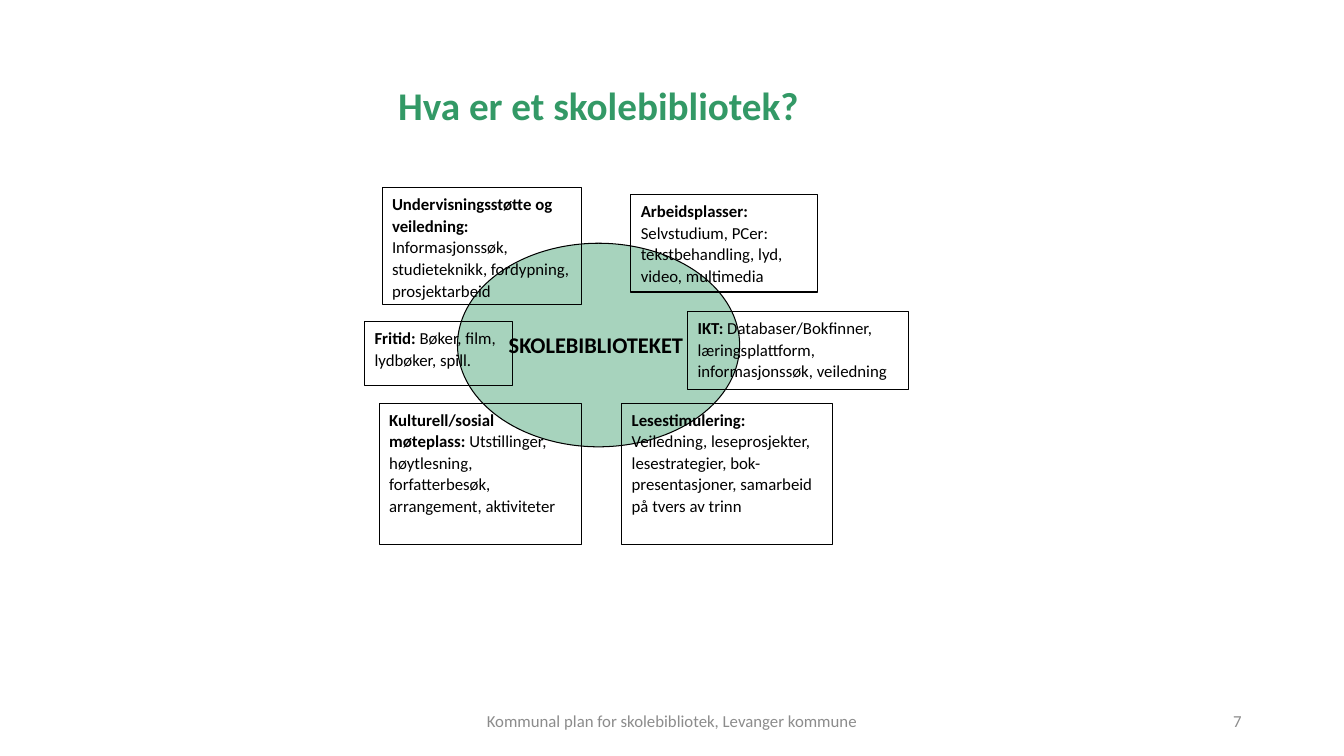
from dataclasses import dataclass

from lxml.etree import SubElement
from pptx import Presentation
from pptx.dml.color import RGBColor
from pptx.enum.shapes import MSO_SHAPE as Preset
from pptx.enum.text import MSO_ANCHOR as Anchor, MSO_AUTO_SIZE as AutoSize, PP_ALIGN as Align
from pptx.oxml.ns import qn
from pptx.shapes.autoshape import Shape
from pptx.slide import Slide
from pptx.text.text import Font
from pptx.util import Cm, Pt

COLOURS = {"green": "339966", "black": "000000", "grey": "8C8C8C"}
FONT_NAME = "Calibri"


@dataclass(frozen=True)
class Frame:
    """Position and size in centimetres."""

    left: float
    top: float
    width: float
    height: float

    def lengths(self) -> tuple[Cm, Cm, Cm, Cm]:
        """Give the four lengths in the order that shapes take them."""
        return Cm(self.left), Cm(self.top), Cm(self.width), Cm(self.height)


@dataclass(frozen=True)
class Role:
    """One role of the school library."""

    frame: Frame
    heading: str
    detail: str


@dataclass(frozen=True)
class FooterItem:
    """One text at the foot of the slide."""

    frame: Frame
    text: str
    alignment: Align


TITLE_FRAME = Frame(9.78, 1.93, 11.2, 1.45)
LIBRARY_FRAME = Frame(11.53, 6.13, 7.11, 5.13)

ROLES = [
    Role(Frame(9.56, 10.16, 5.1, 3.56), "Kulturell/sosial møteplass:",
         "Utstillinger, høytlesning, forfatterbesøk, arrangement, aktiviteter"),
    Role(Frame(15.9, 4.9, 4.7, 2.46), "Arbeidsplasser:",
         "Selvstudium, PCer: tekstbehandling, lyd, video, multimedia"),
    Role(Frame(17.33, 7.85, 5.56, 1.97), "IKT:",
         "Databaser/Bokfinner, læringsplattform, informasjonssøk, veiledning"),
    Role(Frame(15.67, 10.16, 5.31, 3.56), "Lesestimulering:",
         "Veiledning, leseprosjekter, lesestrategier, bok-presentasjoner, samarbeid på tvers av trinn"),
    Role(Frame(9.19, 8.1, 3.73, 1.62), "Fritid:", "Bøker, film, lydbøker, spill."),
    Role(Frame(9.63, 4.73, 5.02, 2.95), "Undervisningsstøtte og veiledning:",
         "Informasjonssøk, studieteknikk, fordypning, prosjektarbeid"),
]

FOOTER_ITEMS = [
    FooterItem(Frame(11.22, 17.65, 11.43, 1.02),
               "Kommunal plan for skolebibliotek, Levanger kommune", Align.CENTER),
    FooterItem(Frame(23.92, 17.65, 7.62, 1.02), "7", Align.RIGHT),
]


def format_font(font: Font, size: float, colour: str, bold: bool = False) -> None:
    """Set typeface, size, colour and weight."""
    font.name = FONT_NAME
    font.size = Pt(size)
    font.bold = bold
    font.color.rgb = RGBColor.from_string(COLOURS[colour])


def add_outlined_shape(slide: Slide, preset: Preset, frame: Frame, anchor: Anchor) -> Shape:
    """Add an unfilled shape with a thin black outline and left-aligned text."""
    shape = slide.shapes.add_shape(preset, *frame.lengths())
    shape.shadow.inherit = False
    shape.fill.background()
    shape.line.color.rgb = RGBColor.from_string(COLOURS["black"])
    shape.line.width = Pt(0.75)
    shape.text_frame.word_wrap = True
    shape.text_frame.vertical_anchor = anchor
    shape.text_frame.paragraphs[0].alignment = Align.LEFT
    return shape


def add_title(slide: Slide) -> None:
    """Fill and move the title placeholder."""
    title = slide.shapes.title
    title.left, title.top, title.width, title.height = TITLE_FRAME.lengths()
    text_frame = title.text_frame
    text_frame.text = "Hva er et skolebibliotek?"
    text_frame.word_wrap = True
    text_frame.auto_size = AutoSize.NONE
    text_frame.vertical_anchor = Anchor.TOP
    paragraph = text_frame.paragraphs[0]
    paragraph.alignment = Align.LEFT
    format_font(paragraph.runs[0].font, 28, "green", bold=True)


def add_library(slide: Slide) -> None:
    """Add the translucent ellipse in the middle."""
    shape = add_outlined_shape(slide, Preset.OVAL, LIBRARY_FRAME, Anchor.MIDDLE)
    shape.fill.solid()
    shape.fill.fore_color.rgb = RGBColor.from_string(COLOURS["green"])
    fill_colour = shape.element.spPr.find(f"{qn('a:solidFill')}/{qn('a:srgbClr')}")
    SubElement(fill_colour, qn("a:alpha"), val="43000")
    shape.text_frame.text = "SKOLEBIBLIOTEKET"
    format_font(shape.text_frame.paragraphs[0].runs[0].font, 16, "black", bold=True)


def add_role(slide: Slide, role: Role) -> None:
    """Add a box with a bold heading followed by its detail."""
    shape = add_outlined_shape(slide, Preset.RECTANGLE, role.frame, Anchor.TOP)
    paragraph = shape.text_frame.paragraphs[0]
    paragraph.text = role.heading
    paragraph.line_spacing = 1.07
    paragraph.space_after = Pt(8)
    format_font(paragraph.runs[0].font, 12, "black", bold=True)
    detail = paragraph.add_run()
    detail.text = f" {role.detail}"
    format_font(detail.font, 12, "black")


def add_footer_item(slide: Slide, item: FooterItem) -> None:
    """Add a grey text at the foot."""
    text_frame = slide.shapes.add_textbox(*item.frame.lengths()).text_frame
    text_frame.text = item.text
    text_frame.word_wrap = True
    text_frame.vertical_anchor = Anchor.MIDDLE
    paragraph = text_frame.paragraphs[0]
    paragraph.alignment = item.alignment
    format_font(paragraph.runs[0].font, 12, "grey")


def main() -> None:
    """Build and save the presentation."""
    presentation = Presentation()
    presentation.slide_width = Cm(33.87)
    presentation.slide_height = Cm(19.05)
    slide = presentation.slides.add_slide(presentation.slide_layouts.get_by_name("Title Only"))
    add_title(slide)
    add_library(slide)
    for role in ROLES:
        add_role(slide, role)
    for item in FOOTER_ITEMS:
        add_footer_item(slide, item)
    presentation.save("out.pptx")


if __name__ == "__main__":
    main()
